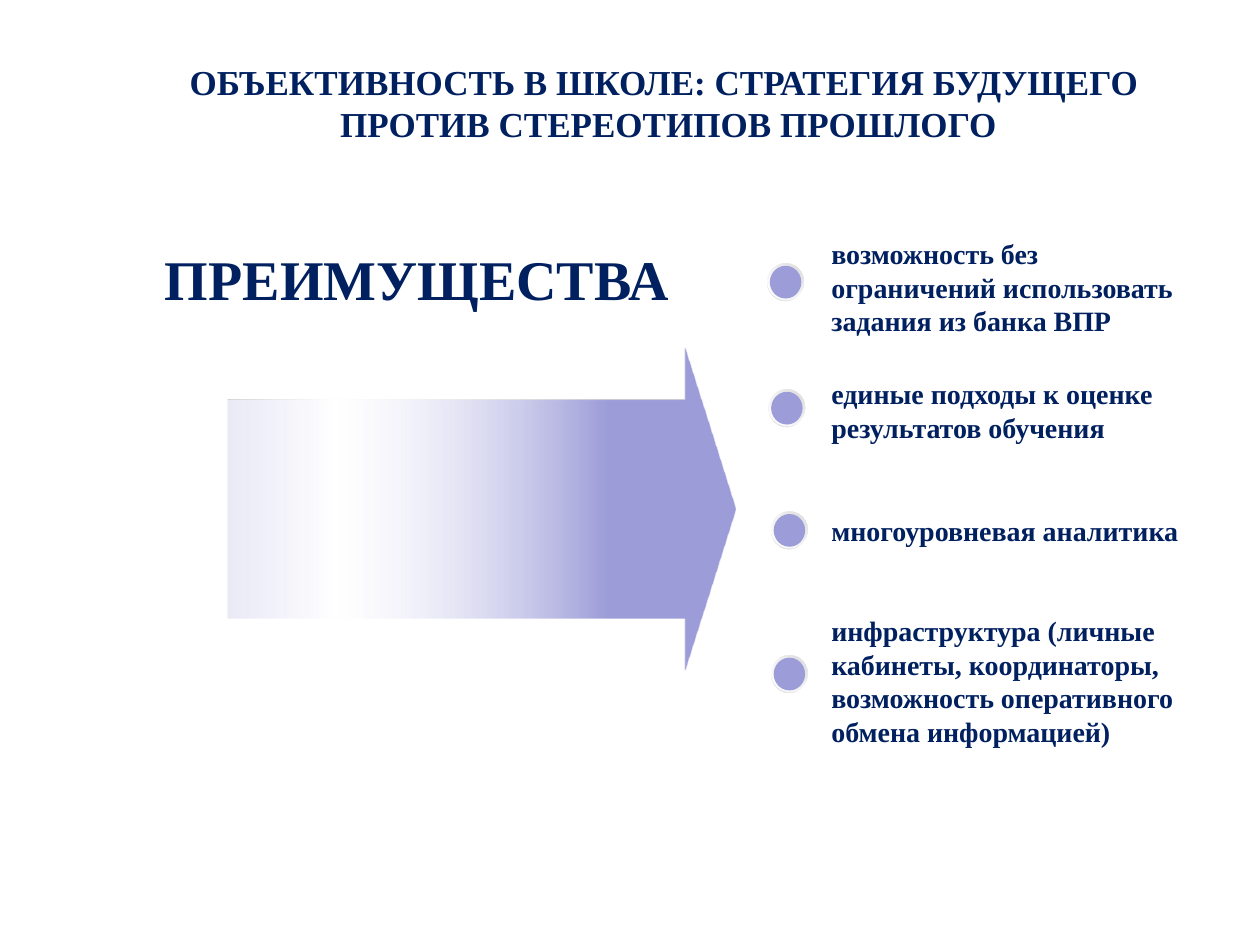
from lxml import etree
from pptx import Presentation
from pptx import util as u
from pptx.dml.color import RGBColor
from pptx.enum import shapes, text
from pptx.oxml import ns

COLORS = {"navy": "002060", "violet": "9C9CD8", "mist": "E7E7F8", "pale": "EAEAF6",
          "white": "FFFFFF", "light": "F2F2F2", "grey": "D9D9D9"}
FONT = "Times New Roman"

TITLE = ["ОБЪЕКТИВНОСТЬ В ШКОЛЕ: СТРАТЕГИЯ БУДУЩЕГО ", "ПРОТИВ СТЕРЕОТИПОВ ПРОШЛОГО"]
HEADING = ["ПРЕИМУЩЕСТВА"]
BENEFITS = [
    ("возможность без ограничений использовать задания из банка ВПР",
     (1.83, 3.1, 0.91), (6.09, 2.09)),
    ("единые подходы к оценке результатов обучения",
     (2.94, 3.37, 0.64), (6.1, 3.09)),
    ("многоуровневая аналитика",
     (4.03, 3.37, 0.37), (6.12, 4.06)),
    ("инфраструктура (личные кабинеты, координаторы, возможность оперативного обмена информацией)",
     (4.82, 3.5, 1.18), (6.12, 5.2)),
]
RING = [(0, "light", 100), (55, "light", 100), (100, "grey", 100)]
DISC = [(0, "white", 100), (51, "light", 100), (100, "grey", 100)]
ARROW = [(25, "violet", 100), (79, "mist", 0), (100, "pale", 100)]


def add_text(page, lines, place, size, margins=(0.1, 0.05), centred=False, middle=False):
    box = page.shapes.add_textbox(*map(u.Inches, place))
    frame = box.text_frame
    frame.word_wrap = True
    frame.margin_left = frame.margin_right = u.Inches(margins[0])
    frame.margin_top = frame.margin_bottom = u.Inches(margins[1])
    frame.vertical_anchor = text.MSO_ANCHOR.MIDDLE if middle else text.MSO_ANCHOR.TOP
    frame.text = "\n".join(lines)
    for para in frame.paragraphs:
        para.alignment = text.PP_ALIGN.CENTER if centred else text.PP_ALIGN.LEFT
        for span in para.runs:
            span.font.name = FONT
            span.font.size = u.Pt(size)
            span.font.bold = True
            span.font.color.rgb = RGBColor.from_string(COLORS["navy"])


def add_shape(page, kind, place, adjustments=()):
    shape = page.shapes.add_shape(kind, *map(u.Inches, place))
    shape.shadow.inherit = False
    shape.line.fill.background()
    for index, value in enumerate(adjustments):
        shape.adjustments[index] = value
    return shape


def set_gradient(shape, stops, angle):
    shape.fill.background()
    properties = shape.fill._xPr
    gradient = etree.Element(ns.qn("a:gradFill"), rotWithShape="1")
    stop_list = etree.SubElement(gradient, ns.qn("a:gsLst"))
    for position, color, opacity in stops:
        stop = etree.SubElement(stop_list, ns.qn("a:gs"), pos=str(position * 1000))
        value = etree.SubElement(stop, ns.qn("a:srgbClr"), val=COLORS[color])
        if opacity < 100:
            etree.SubElement(value, ns.qn("a:alpha"), val=str(opacity * 1000))
    etree.SubElement(gradient, ns.qn("a:lin"), ang=str(angle * 60000), scaled="0")
    properties.replace(properties.find(ns.qn("a:noFill")), gradient)


def add_marker(page, left, top):
    ring = add_shape(page, shapes.MSO_SHAPE.DONUT, (left, top, 0.29, 0.3), [0.049])
    set_gradient(ring, RING, 135)
    disc = add_shape(page, shapes.MSO_SHAPE.OVAL, (left, top, 0.29, 0.29))
    set_gradient(disc, DISC, 315)
    core = add_shape(page, shapes.MSO_SHAPE.OVAL, (left + 0.02, top + 0.02, 0.25, 0.26))
    core.fill.solid()
    core.fill.fore_color.rgb = RGBColor.from_string(COLORS["violet"])


def main():
    deck = Presentation()
    deck.slide_width, deck.slide_height = u.Inches(10), u.Inches(7.5)
    page = deck.slides.add_slide(deck.slide_layouts[6])
    add_text(page, TITLE, (0.79, 0.44, 9.03, 0.75), 20, (0.08, 0.04), centred=True)
    add_text(page, HEADING, (1, 1.66, 4.62, 1.1), 32, (0.08, 0.04), centred=True, middle=True)
    for benefit, (top, width, height), marker in BENEFITS:
        add_text(page, [benefit], (6.5, top, width, height), 16)
        add_marker(page, *marker)
    arrow = add_shape(page, shapes.MSO_SHAPE.RIGHT_ARROW, (1.81, 2.76, 4.03, 2.56), [0.676, 0.158])
    set_gradient(arrow, ARROW, 180)
    deck.save("out.pptx")


if __name__ == "__main__":
    main()
